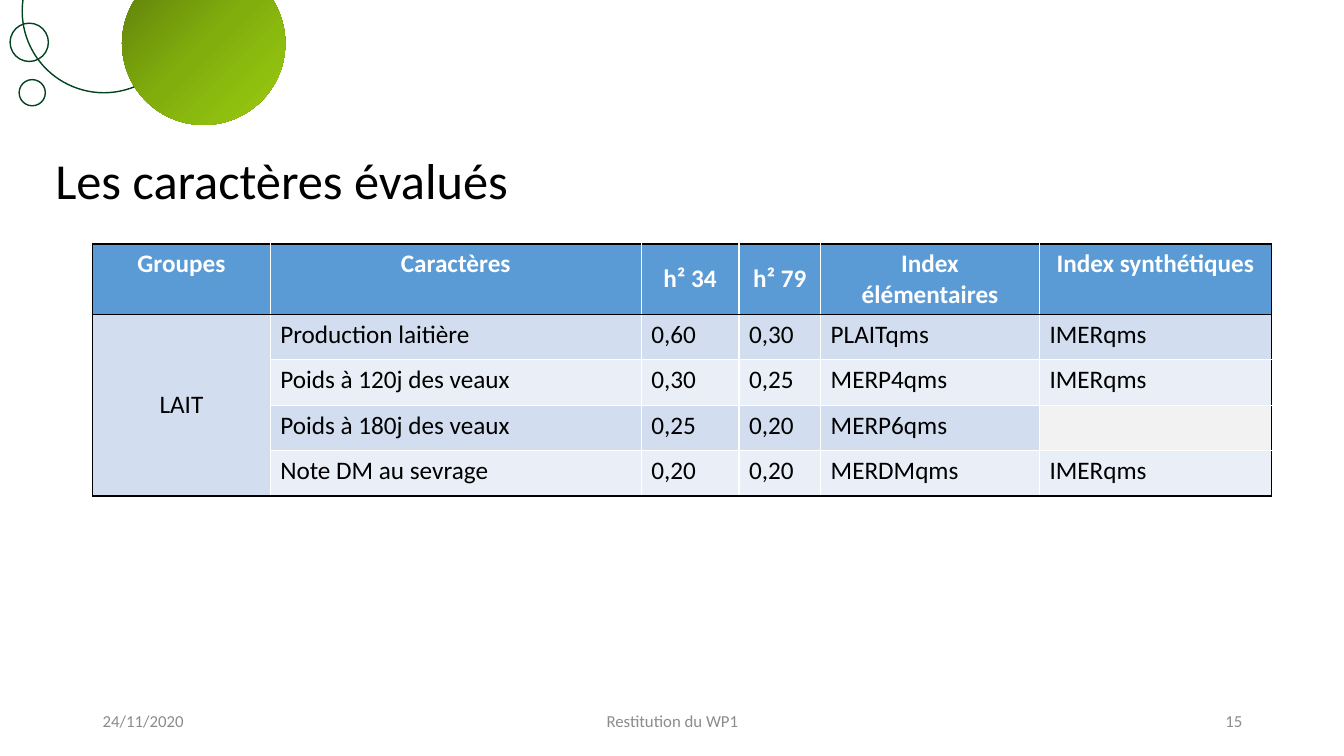
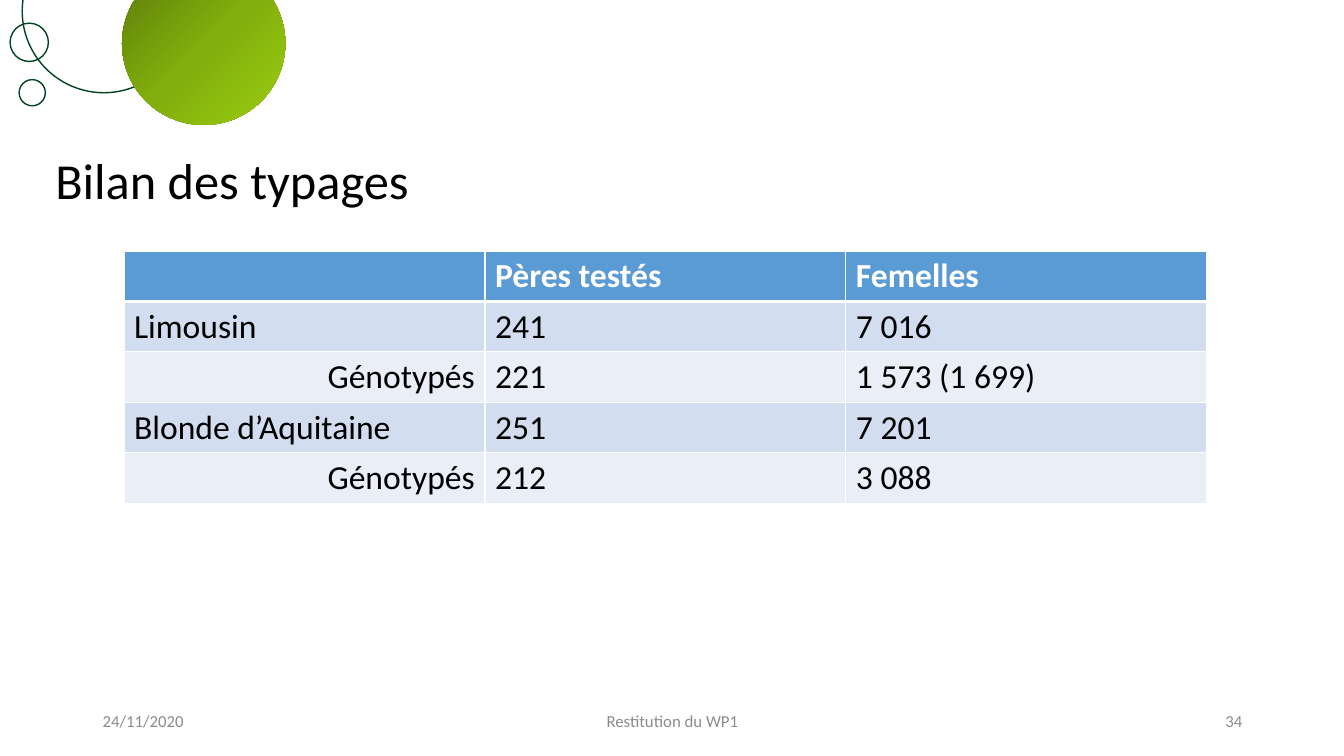
from copy import deepcopy

from lxml import etree
from pptx import Presentation
from pptx import util as u
from pptx.dml.color import RGBColor
from pptx.enum import shapes, text
from pptx.oxml.ns import qn

PX = 9144  # EMU per px, 100 px to the inch
LEFT, CENTER, RIGHT = text.PP_ALIGN.LEFT, text.PP_ALIGN.CENTER, text.PP_ALIGN.RIGHT
MIDDLE = text.MSO_ANCHOR.MIDDLE

COLORS = {
    "ink": "000000", "white": "FFFFFF", "footer": "8C8C8C", "ring": "01441F",
    "header": "5B9BD5", "band_dark": "D2DEEF", "band_light": "EAEFF7", "no_index": "F2F2F2",
}
DISC_STOPS = [(0, "5B7A09"), (0.5, "81AD0D"), (1, "9ACD10")]
RINGS = [(22, -70, 162), (10, 23, 38), (19, 79, 26)]
DISC = (121, -38, 162)

TITLE_FONT = {"size": u.Pt(36), "bold": False}
FOOTER_FONT = {"size": u.Pt(12), "bold": False}

SLIDES = [
    {
        "title": "Les caractères évalués", "number": "15",
        "at": (92, 242), "columns": [176, 368, 97, 81, 217, 230],
        "header_height": 70, "row_height": 45, "size": 18,
        "frame": "ink", "header_rule": ("ink", 1),
        "centered": ["LAIT"], "center_header": True, "right": [],
        "middle": ["h² 34", "h² 79", "LAIT"],
        "fills": {(3, 5): "no_index"}, "merge": ((1, 0), (4, 0)),
        "rows": [
            ["Groupes", "Caractères", "h² 34", "h² 79", "Index élémentaires", "Index synthétiques"],
            ["LAIT", "Production laitière", "0,60", "0,30", "PLAITqms", "IMERqms"],
            ["", "Poids à 120j des veaux", "0,30", "0,25", "MERP4qms", "IMERqms"],
            ["", "Poids à 180j des veaux", "0,25", "0,20", "MERP6qms", ""],
            ["", "Note DM au sevrage", "0,20", "0,20", "MERDMqms", "IMERqms"],
        ],
    },
    {
        "title": "Bilan des typages", "number": "34",
        "at": (123, 249), "columns": [358] * 3,
        "header_height": 50, "row_height": 50, "size": 24,
        "frame": "white", "header_rule": ("white", 3),
        "centered": [], "center_header": False, "right": ["Génotypés"],
        "middle": [], "fills": {}, "merge": None,
        "rows": [
            ["", "Pères testés", "Femelles"],
            ["Limousin", "241", "7 016"],
            ["Génotypés", "221", "1 573 (1 699)"],
            ["Blonde d’Aquitaine", "251", "7 201"],
            ["Génotypés", "212", "3 088"],
        ],
    },
]


def write(frame, words, font_values, color, align):
    paragraph = frame.paragraphs[0]
    paragraph.alignment = align
    run = paragraph.add_run()
    run.text = words
    for name, value in {"name": "Calibri", **font_values}.items():
        setattr(run.font, name, value)
    run.font.color.rgb = RGBColor.from_string(COLORS[color])
    return paragraph


def add_border(cell, side, color, points):
    line = etree.SubElement(cell._tc.get_or_add_tcPr(), qn("a:ln" + side), w=str(u.Pt(points)))
    fill = etree.SubElement(line, qn("a:solidFill"))
    etree.SubElement(fill, qn("a:srgbClr"), val=COLORS[color])


deck = Presentation()
deck.slide_width, deck.slide_height = 1333 * PX, 750 * PX

for content in SLIDES:
    slide = deck.slides.add_slide(deck.slide_layouts[6])

    # Corner circles: the disc covers the large ring, the small rings come last
    for left, top, size in [RINGS[0], DISC, *RINGS[1:]]:
        circle = slide.shapes.add_shape(
            shapes.MSO_SHAPE.OVAL, left * PX, top * PX, size * PX, size * PX)
        circle.shadow.inherit = False
        if (left, top, size) == DISC:
            circle.line.fill.background()
            circle.fill.gradient()
            circle.fill.gradient_angle = 315
            stop_list = circle._element.spPr.find(".//" + qn("a:gsLst"))
            stop_list.insert(1, deepcopy(stop_list[0]))
            for stop, (position, color) in zip(circle.fill.gradient_stops, DISC_STOPS):
                stop.position = position
                stop.color.rgb = RGBColor.from_string(color)
        else:
            circle.fill.background()
            circle.line.color.rgb = RGBColor.from_string(COLORS["ring"])
            circle.line.width = u.Pt(1)

    # Title and footer
    for words, box, font_values, color, align in [
        (content["title"], (45, 138, 1150, 88), TITLE_FONT, "ink", LEFT),
        ("24/11/2020", (92, 695, 300, 40), FOOTER_FONT, "footer", LEFT),
        ("Restitution du WP1", (442, 695, 450, 40), FOOTER_FONT, "footer", CENTER),
        (content["number"], (942, 695, 300, 40), FOOTER_FONT, "footer", RIGHT),
    ]:
        frame = slide.shapes.add_textbox(*(length * PX for length in box)).text_frame
        frame.word_wrap = True
        frame.vertical_anchor = MIDDLE
        paragraph = write(frame, words, font_values, color, align)
        if font_values is TITLE_FONT:
            paragraph.line_spacing = 0.9

    # Table grid
    rows, columns = content["rows"], content["columns"]
    heights = [content["header_height"]] + [content["row_height"]] * (len(rows) - 1)
    left, top = content["at"]
    table = slide.shapes.add_table(
        len(rows), len(columns), left * PX, top * PX,
        sum(columns) * PX, sum(heights) * PX).table
    table.horz_banding = False
    for column, width in zip(table.columns, columns):
        column.width = width * PX
    for row, height in zip(table.rows, heights):
        row.height = height * PX
    if content["merge"]:
        first, last = content["merge"]
        table.cell(*first).merge(table.cell(*last))

    # Table cells
    outer, header_rule, inner = (content["frame"], 1), content["header_rule"], ("white", 1)
    for r, row in enumerate(rows):
        for c, words in enumerate(row):
            cell = table.cell(r, c)
            bottom_row = r + (cell.span_height if cell.is_merge_origin else 1)
            borders = {
                "L": outer if c == 0 else inner,
                "R": outer if c == len(columns) - 1 else inner,
                "T": outer if r == 0 else header_rule if r == 1 else inner,
                "B": header_rule if r == 0 else outer if bottom_row == len(rows) else inner,
            }
            for side, border in borders.items():
                add_border(cell, side, *border)

            band = "header" if r == 0 else "band_dark" if r % 2 else "band_light"
            cell.fill.solid()
            cell.fill.fore_color.rgb = RGBColor.from_string(
                COLORS[content["fills"].get((r, c), band)])
            if not words:
                continue
            if words in content["middle"]:
                cell.vertical_anchor = MIDDLE
            centered = words in content["centered"] or (r == 0 and content["center_header"])
            align = CENTER if centered else RIGHT if words in content["right"] else LEFT
            write(cell.text_frame, words, {"size": u.Pt(content["size"]), "bold": r == 0},
                  "white" if r == 0 else "ink", align)

deck.save("out.pptx")
